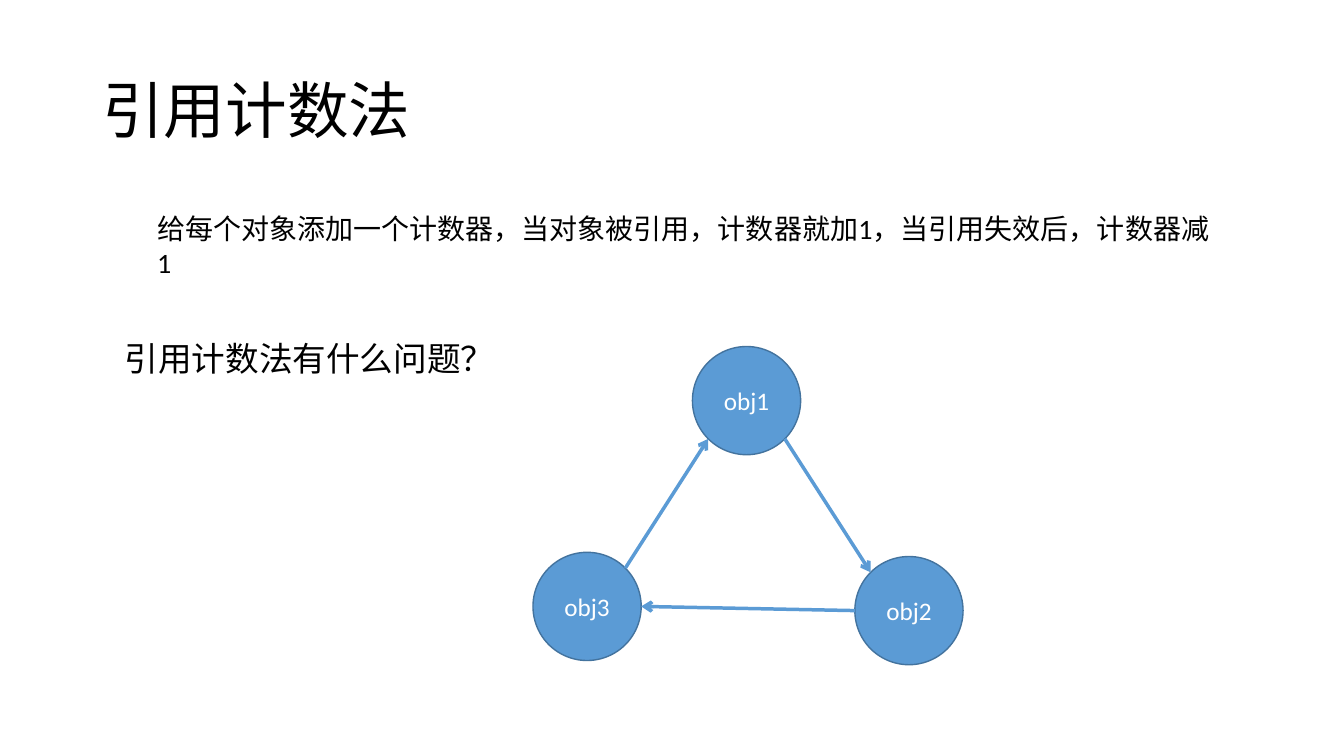
import math
from dataclasses import dataclass

import pptx
import pptx.dml.color
import pptx.enum.shapes
import pptx.enum.text
import pptx.oxml
import pptx.oxml.ns
import pptx.slide
import pptx.util

Pt = pptx.util.Pt
RGBColor = pptx.dml.color.RGBColor
ANCHOR = pptx.enum.text.MSO_ANCHOR

BLACK = RGBColor(0x00, 0x00, 0x00)
WHITE = RGBColor(0xFF, 0xFF, 0xFF)
BLUE = RGBColor(0x5B, 0x9B, 0xD5)
DARK_BLUE = RGBColor(0x43, 0x73, 0x9E)
FONT = "Calibri"
DIAMETER = 77.3


@dataclass(frozen=True)
class Label:
    text: str
    left: float
    top: float
    width: float
    height: float
    size: float
    wrap: bool = True
    anchor: ANCHOR = ANCHOR.TOP
    spacing: float = 1.0


@dataclass(frozen=True)
class Node:
    name: str
    left: float
    top: float

    def rim(self, degrees: float) -> tuple[float, float]:
        radius = DIAMETER / 2
        angle = math.radians(degrees)
        return (self.left + radius * (1 + math.cos(angle)),
                self.top + radius * (1 - math.sin(angle)))


@dataclass(frozen=True)
class Reference:
    source: Node
    source_angle: float
    target: Node
    target_angle: float


LABELS = [
    Label("引用计数法", 66, 28.8, 828, 104.4, 44, anchor=ANCHOR.MIDDLE, spacing=0.9),
    Label("给每个对象添加一个计数器，当对象被引用，计数器就加1，当引用失效后，计数器减1",
          105.1, 147.6, 774.7, 31.7, 20),
    Label("引用计数法有什么问题？", 82.1, 237.6, 278.6, 36, 24, wrap=False),
]
OBJ1 = Node("obj1", 494.6, 247.5)
OBJ2 = Node("obj2", 610.6, 397.5)
OBJ3 = Node("obj3", 380.7, 394.5)
REFERENCES = [
    Reference(OBJ3, 45, OBJ1, 225),
    Reference(OBJ2, 180, OBJ3, 0),
    Reference(OBJ1, 315, OBJ2, 135),
]


def set_font(p, size: float, color: RGBColor) -> None:
    p.font.name = FONT
    p.font.size = Pt(size)
    p.font.color.rgb = color


def add_label(s: pptx.slide.Slide, label: Label) -> None:
    sp = s.shapes.add_textbox(Pt(label.left), Pt(label.top), Pt(label.width), Pt(label.height))
    tf = sp.text_frame
    tf.word_wrap = label.wrap
    tf.vertical_anchor = label.anchor
    p = tf.paragraphs[0]
    p.text = label.text
    p.line_spacing = label.spacing
    set_font(p, label.size, BLACK)


def add_node(s: pptx.slide.Slide, node: Node) -> None:
    sp = s.shapes.add_shape(pptx.enum.shapes.MSO_SHAPE.OVAL, Pt(node.left), Pt(node.top),
                            Pt(DIAMETER), Pt(DIAMETER))
    sp.shadow.inherit = False
    sp.fill.solid()
    sp.fill.fore_color.rgb = BLUE
    sp.line.color.rgb = DARK_BLUE
    sp.line.width = Pt(1)
    tf = sp.text_frame
    tf.vertical_anchor = ANCHOR.MIDDLE
    p = tf.paragraphs[0]
    p.text = node.name
    p.alignment = pptx.enum.text.PP_ALIGN.CENTER
    set_font(p, 18, WHITE)


def add_reference(s: pptx.slide.Slide, ref: Reference) -> None:
    x1, y1 = ref.source.rim(ref.source_angle)
    x2, y2 = ref.target.rim(ref.target_angle)
    line = s.shapes.add_connector(pptx.enum.shapes.MSO_CONNECTOR.STRAIGHT,
                                  Pt(x1), Pt(y1), Pt(x2), Pt(y2))
    line.line.color.rgb = BLUE
    line.line.width = Pt(2.5)
    tail = pptx.oxml.parse_xml(f'<a:tailEnd {pptx.oxml.ns.nsdecls("a")} type="arrow"/>')
    line.line._get_or_add_ln().append(tail)
    effects = pptx.oxml.parse_xml(f'<a:effectLst {pptx.oxml.ns.nsdecls("a")}/>')
    line._element.spPr.append(effects)


def main() -> None:
    prs = pptx.Presentation()
    prs.slide_width = Pt(960)
    prs.slide_height = Pt(540)
    s = prs.slides.add_slide(prs.slide_layouts[6])
    s.background.fill.solid()
    s.background.fill.fore_color.rgb = WHITE
    for label in LABELS:
        add_label(s, label)
    for node in (OBJ1, OBJ2, OBJ3):
        add_node(s, node)
    for ref in REFERENCES:
        add_reference(s, ref)
    prs.save("out.pptx")


if __name__ == "__main__":
    main()
